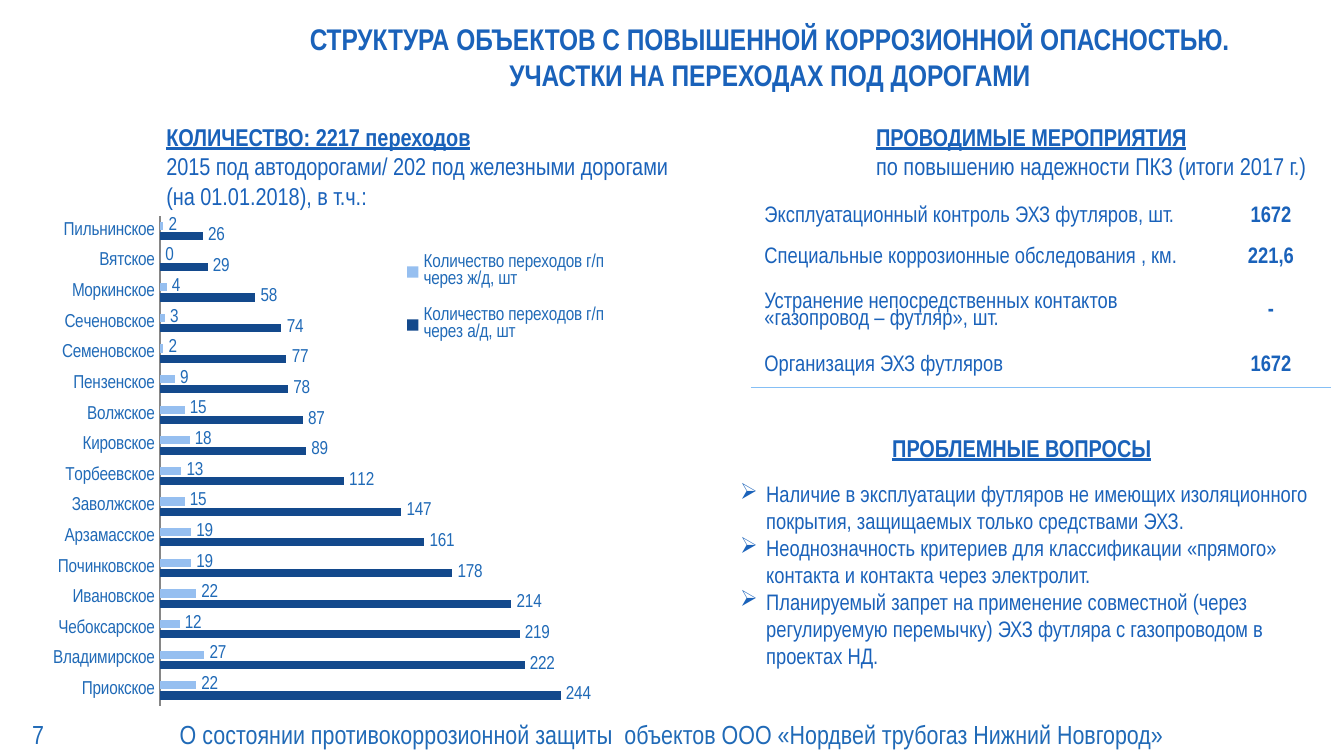
"""Builds the slide on corrosion-prone pipeline crossings under roads."""
from lxml import etree
from pptx import Presentation
from pptx import util as u
from pptx.chart import data as chart_data
from pptx.dml.color import RGBColor
from pptx.enum import chart as ch
from pptx.enum import text
from pptx.oxml import parse_xml
from pptx.oxml.ns import nsdecls, qn

PX = 914400 / 134.4
FONT = "Arial Narrow"
COLORS = {"text": "1A62BA", "footer": "206AB7", "rule": "85BFF5",
          "road": "13498C", "rail": "96BFF0", "axis": "868686"}
MIDDLE = text.MSO_ANCHOR.MIDDLE
CENTER = text.PP_ALIGN.CENTER
HEADING = {"bold": True, "underline": True}

TITLE = ("СТРУКТУРА ОБЪЕКТОВ С ПОВЫШЕННОЙ КОРРОЗИОННОЙ ОПАСНОСТЬЮ.\v"
         "УЧАСТКИ НА ПЕРЕХОДАХ ПОД ДОРОГАМИ")
FOOTER = ("О состоянии противокоррозионной защиты  объектов "
          "ООО «Нордвей трубогаз Нижний Новгород»")
MEASURES = [
    ("Эксплуатационный контроль ЭХЗ футляров, шт.", "1672"),
    ("Специальные коррозионные обследования , км.", "221,6"),
    ("Устранение непосредственных контактов «газопровод – футляр», шт.", "-"),
    ("Организация ЭХЗ футляров", "1672"),
]
ISSUES = [
    "Наличие в эксплуатации футляров не имеющих изоляционного покрытия, "
    "защищаемых только средствами ЭХЗ.",
    "Неоднозначность критериев для классификации «прямого» контакта и "
    "контакта через электролит.",
    "Планируемый запрет на применение совместной (через регулируемую "
    "перемычку) ЭХЗ футляра с газопроводом в проектах НД.",
]
CROSSINGS = [
    ("Приокское", 244, 22), ("Владимирское", 222, 27),
    ("Чебоксарское", 219, 12), ("Ивановское", 214, 22),
    ("Починковское", 178, 19), ("Арзамасское", 161, 19),
    ("Заволжское", 147, 15), ("Торбеевское", 112, 13),
    ("Кировское", 89, 18), ("Волжское", 87, 15),
    ("Пензенское", 78, 9), ("Семеновское", 77, 2),
    ("Сеченовское", 74, 3), ("Моркинское", 58, 4),
    ("Вятское", 29, 0), ("Пильнинское", 26, 2),
]


def px(n):
    return u.Emu(round(n * PX))


def rgb(name):
    return RGBColor.from_string(COLORS[name])


class Deck:
    """Holds the text style and the current slide."""

    def __init__(self, prs):
        self.slide = prs.slides.add_slide(prs.slide_layouts[5])
        self.shapes = self.slide.shapes

    def style(self, font, size, color="text", **values):
        values = {"name": FONT, "size": u.Pt(size), **values}
        for key, value in values.items():
            setattr(font, key, value)
        font.color.rgb = rgb(color)

    def title(self, box, content, size):
        s = self.shapes.title
        for key, n in zip(("left", "top", "width", "height"), box):
            setattr(s, key, px(n))
        tf = s.text_frame
        tf.text = content
        tf.vertical_anchor = MIDDLE
        p = tf.paragraphs[0]
        p.alignment = CENTER
        for r in p.runs:
            self.style(r.font, size, bold=True)

    def text(self, box, lines, size, color="text", anchor=None, align=None,
             inset=True, bullet=None, first=None):
        tf = self.shapes.add_textbox(*map(px, box)).text_frame
        tf.word_wrap = True
        tf.vertical_anchor = anchor
        if not inset:
            for side in ("left", "top", "right", "bottom"):
                setattr(tf, f"margin_{side}", 0)
        for i, line in enumerate(lines):
            p = tf.paragraphs[0] if i == 0 else tf.add_paragraph()
            p.alignment = align
            if bullet:
                pPr = p._p.get_or_add_pPr()
                pPr.set("marL", str(px(26)))
                pPr.set("indent", str(-px(26)))
                etree.SubElement(pPr, qn("a:buChar")).set("char", bullet)
            r = p.add_run()
            r.text = line
            self.style(r.font, size, color, **(first or {} if i == 0 else {}))

    def borders(self, cell):
        tcPr = cell._tc.get_or_add_tcPr()
        for i, side in enumerate("LRTB"):
            paint = "<a:noFill/>"
            if side == "B":
                paint = f'<a:solidFill><a:srgbClr val="{COLORS["rule"]}"/></a:solidFill>'
            tcPr.insert(i, parse_xml(
                f'<a:ln{side} {nsdecls("a")} w="9525">{paint}</a:ln{side}>'))

    def table(self, left, top, widths, heights, rows, size):
        table = self.shapes.add_table(
            len(rows), len(widths), px(left), px(top),
            px(sum(widths)), px(sum(heights))).table
        table.first_row = table.horz_banding = False
        for col, w in zip(table.columns, widths):
            col.width = px(w)
        for row, h, values in zip(table.rows, heights, rows):
            row.height = px(h)
            for i, (cell, value) in enumerate(zip(row.cells, values)):
                cell.text = value
                cell.vertical_anchor = MIDDLE
                cell.fill.background()
                self.borders(cell)
                p = cell.text_frame.paragraphs[0]
                p.line_spacing = 0.8
                p.alignment = CENTER if i else None
                self.style(p.runs[0].font, size, bold=bool(i))

    def layout(self, parent, index, **values):
        items = "".join(f'<c:{k} val="{v}"/>' for k, v in values.items())
        for old in parent.findall(qn("c:layout")):
            parent.remove(old)
        parent.insert(index, parse_xml(
            f'<c:layout {nsdecls("c")}><c:manualLayout>{items}'
            '</c:manualLayout></c:layout>'))

    def chart(self, box, rows, series, size):
        data = chart_data.CategoryChartData(number_format="0")
        names, *columns = zip(*rows)
        data.categories = names
        for (name, _), values in zip(series, columns):
            data.add_series(name, values)
        chart = self.shapes.add_chart(
            ch.XL_CHART_TYPE.BAR_CLUSTERED, *map(px, box), data).chart
        self.style(chart.font, size, "footer")
        chart.has_title = False
        chart.has_legend = True
        chart.legend.position = ch.XL_LEGEND_POSITION.TOP
        chart.legend.include_in_layout = False
        self.layout(chart.legend._element, 1, xMode="edge", yMode="edge",
                    x=0.57, y=0.05, w=0.34, h=0.25)
        plot = chart.plots[0]
        plot.gap_width, plot.overlap = 150, -25
        plot.vary_by_categories = False
        self.layout(plot._element.getparent(), 0, layoutTarget="inner",
                    xMode="edge", yMode="edge", x=0.2, y=0.01, w=0.77, h=0.98)
        for ser, (_, color) in zip(plot.series, series):
            ser.format.fill.solid()
            ser.format.fill.fore_color.rgb = rgb(color)
            labels = ser.data_labels
            labels.show_value = True
            labels.number_format = "0"
            labels.number_format_is_linked = False
            labels.position = ch.XL_LABEL_POSITION.OUTSIDE_END
            self.style(labels.font, size, "footer")
        chart.category_axis.major_tick_mark = ch.XL_TICK_MARK.NONE
        chart.category_axis.format.line.color.rgb = rgb("axis")
        axis = chart.value_axis
        axis.has_major_gridlines = axis.visible = False
        axis.minimum_scale, axis.maximum_scale = 0, 300


def main():
    prs = Presentation()
    prs.slide_width, prs.slide_height = px(1344), px(756)
    deck = Deck(prs)
    deck.title((196, 0, 1148, 113), TITLE, 16)
    deck.text((863, 116, 469, 73),
              ["ПРОВОДИМЫЕ МЕРОПРИЯТИЯ",
               "по повышению надежности ПКЗ (итоги 2017 г.)"], 13, first=HEADING)
    deck.text((32, 714, 235, 41), ["7"], 14, "footer", MIDDLE, inset=False)
    deck.text((0, 714, 1344, 41), [FOOTER], 14, "footer", MIDDLE, CENTER)
    deck.table(751, 197, (460, 120), (41, 40, 68, 42), MEASURES, 12)
    deck.text((879, 427, 382, 43), ["ПРОБЛЕМНЫЕ ВОПРОСЫ"], 13, first=HEADING)
    deck.text((727, 474, 603, 203), ISSUES, 12, bullet="➢")
    deck.chart((32, 211, 640, 500), CROSSINGS,
               [("Количество переходов г/п через а/д, шт", "road"),
                ("Количество переходов г/п через ж/д, шт", "rail")], 10)
    deck.text((153, 116, 540, 102),
              ["КОЛИЧЕСТВО: 2217 переходов",
               "2015 под автодорогами/ 202 под железными дорогами",
               "(на 01.01.2018), в т.ч.:"], 13, first=HEADING)
    prs.save("out.pptx")


if __name__ == "__main__":
    main()
